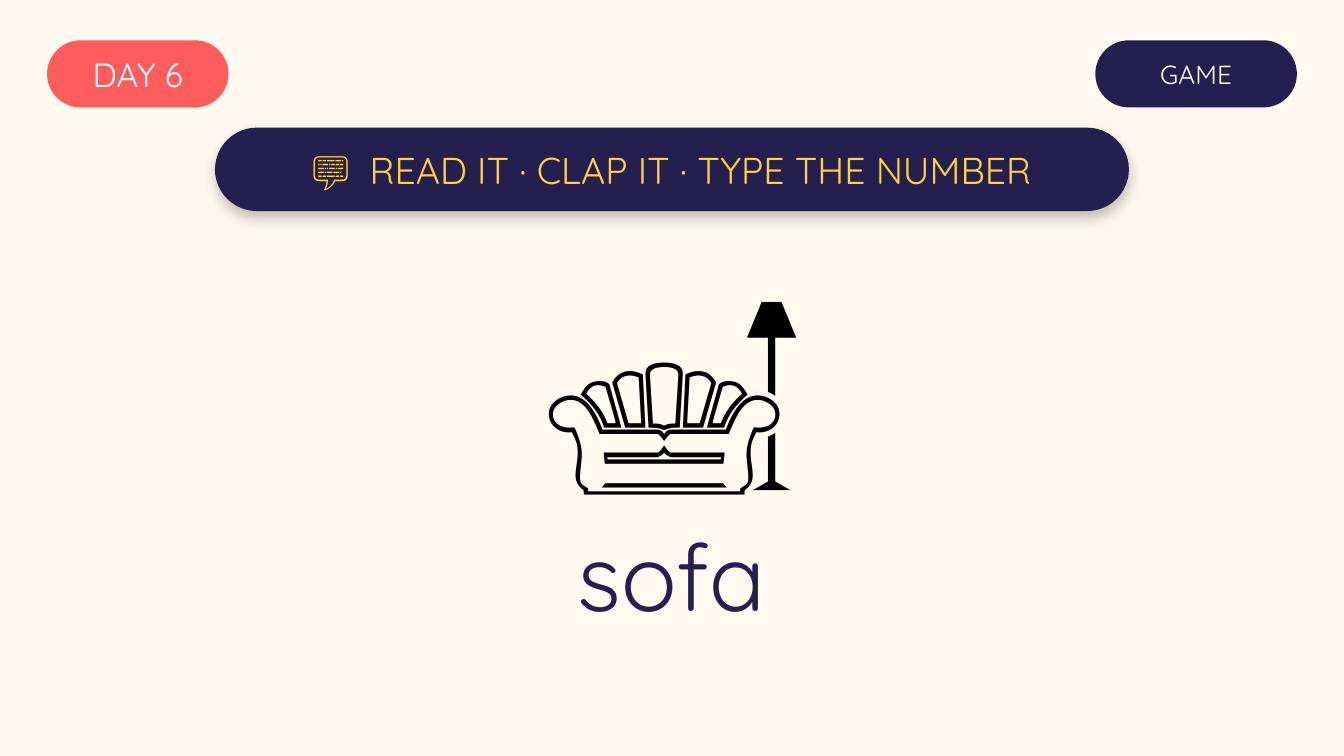
from lxml.etree import SubElement
from pptx import Presentation
from pptx.dml.color import RGBColor
from pptx.enum.shapes import MSO_SHAPE
from pptx.enum.text import MSO_ANCHOR, MSO_AUTO_SIZE, PP_ALIGN
from pptx.oxml.ns import qn
from pptx.util import Pt

THEME = {
    "colors": {"cream": "FFF9EF", "coral": "FF5D5D", "navy": "241F4E",
               "yellow": "FFD23F", "white": "FFFFFF", "black": "000000"},
    "sizes": {"day": 18, "tag": 14, "banner": 20, "picture": 119, "word": 50},
    "fonts": {"text": "Quicksand", "symbol": "Calibri"},
}
WIDTH, HEIGHT = 720, 405
MARGIN, TOP, PILL_HEIGHT = 25.2, 21.6, 36
DAY_WIDTH, TAG_WIDTH = 97.2, 108
BANNER_WIDTH, BANNER_TOP, BANNER_HEIGHT = 489.6, 68.4, 44.64

BANNER_TEXT = "💬  READ IT · CLAP IT · TYPE THE NUMBER"
PILLS = [
    ("DAY 6", MARGIN, DAY_WIDTH, "coral", "day"),
    ("GAME", WIDTH - MARGIN - TAG_WIDTH, TAG_WIDTH, "navy", "tag"),
]
CARD_LINES = [
    ("🛋️", 126, 129.6, "black", "picture", "symbol", MSO_ANCHOR.TOP),
    ("sofa", 277.2, 61.2, "navy", "word", "text", MSO_ANCHOR.MIDDLE),
]


def color(name):
    return RGBColor.from_string(THEME["colors"][name])


def add_pill(slide, left, top, width, height, fill):
    pill = slide.shapes.add_shape(
        MSO_SHAPE.ROUNDED_RECTANGLE, Pt(left), Pt(top), Pt(width), Pt(height))
    pill.adjustments[0] = 0.5
    pill.fill.solid()
    pill.fill.fore_color.rgb = color(fill)
    pill.line.fill.background()
    pill.shadow.inherit = False
    return pill


def add_soft_shadow(shape):
    effects = shape._element.spPr.find(qn("a:effectLst"))
    shadow = SubElement(effects, qn("a:outerShdw"), blurRad=str(Pt(8)),
                        dist=str(Pt(3)), dir=str(90 * 60000), rotWithShape="0")
    tint = SubElement(shadow, qn("a:srgbClr"), val=THEME["colors"]["black"])
    SubElement(tint, qn("a:alpha"), val="25000")


def write(shape, text, ink, size, font="text", anchor=MSO_ANCHOR.MIDDLE, inset=None):
    frame = shape.text_frame
    frame.word_wrap = True
    frame.auto_size = MSO_AUTO_SIZE.NONE
    frame.vertical_anchor = anchor
    if inset is not None:
        frame.margin_left = frame.margin_right = Pt(inset)
        frame.margin_top = frame.margin_bottom = Pt(inset)
    paragraph = frame.paragraphs[0]
    paragraph.alignment = PP_ALIGN.CENTER
    run = paragraph.add_run()
    run.text = text
    run.font.name = THEME["fonts"][font]
    run.font.size = Pt(THEME["sizes"][size])
    run.font.color.rgb = color(ink)


def add_banner(slide):
    box = ((WIDTH - BANNER_WIDTH) / 2, BANNER_TOP, BANNER_WIDTH, BANNER_HEIGHT)
    add_soft_shadow(add_pill(slide, *box, "navy"))
    title = slide.shapes.title
    title.left, title.top, title.width, title.height = map(Pt, box)
    write(title, BANNER_TEXT, "yellow", "banner", inset=0)
    title._element.getparent().append(title._element)


def main():
    presentation = Presentation()
    presentation.slide_width, presentation.slide_height = Pt(WIDTH), Pt(HEIGHT)
    slide = presentation.slides.add_slide(presentation.slide_layouts[5])
    slide.background.fill.solid()
    slide.background.fill.fore_color.rgb = color("cream")

    for text, left, width, fill, size in PILLS:
        pill = add_pill(slide, left, TOP, width, PILL_HEIGHT, fill)
        write(pill, text, "white", size, inset=0)
    add_banner(slide)
    for text, top, height, ink, size, font, anchor in CARD_LINES:
        box = slide.shapes.add_textbox(0, Pt(top), Pt(WIDTH), Pt(height))
        write(box, text, ink, size, font, anchor)

    presentation.save("out.pptx")


if __name__ == "__main__":
    main()
